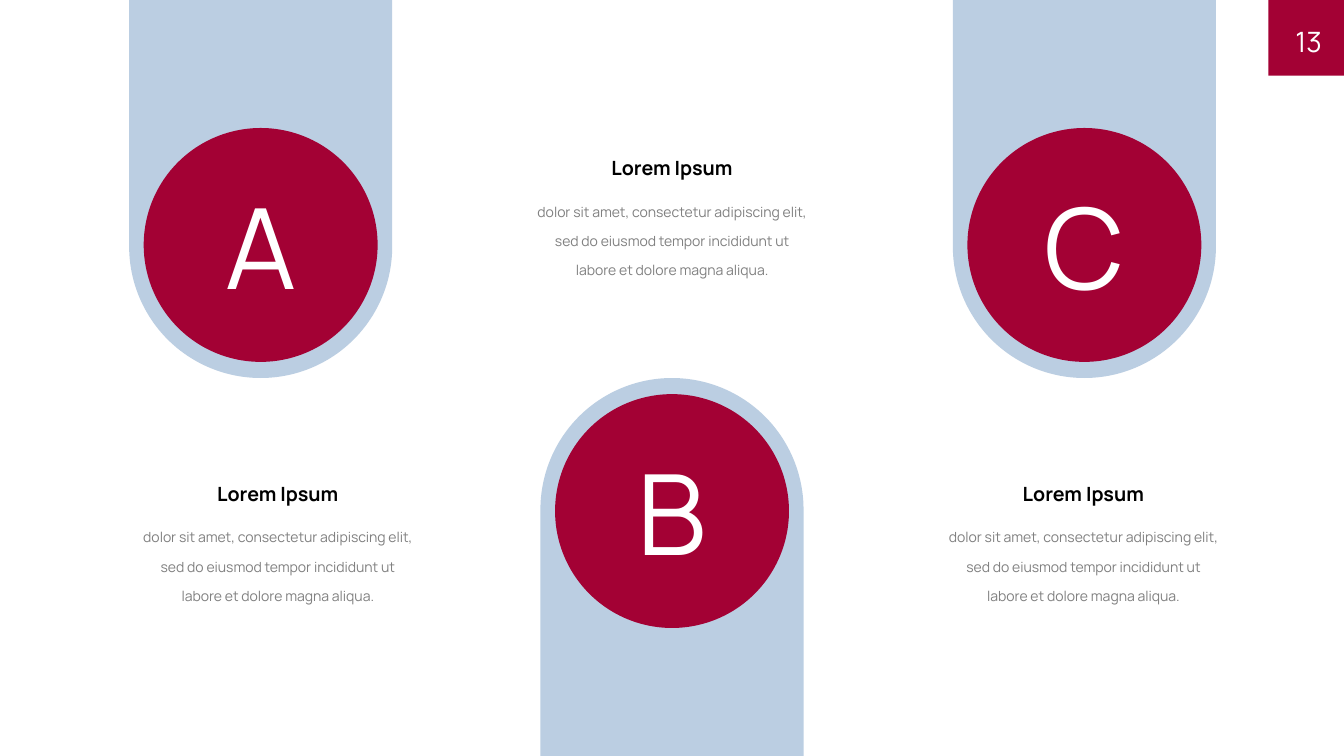
from pptx import Presentation
from pptx.dml.color import RGBColor
from pptx.enum.shapes import MSO_SHAPE
from pptx.enum.text import MSO_ANCHOR, MSO_AUTO_SIZE, PP_ALIGN
from pptx.util import Inches, Pt


def color(value):
    return RGBColor.from_string(value)


class SlideBuilder:
    """Draws the elements of one slide in a shared style."""

    RED, BLUE, WHITE, BLACK, GRAY = "A30134", "BBCEE2", "FFFFFF", "000000", "808080"
    FONT = "Manrope"

    def __init__(self, slide):
        self.slide = slide

    def shape(self, kind, area, fill):
        shape = self.slide.shapes.add_shape(kind, *map(Inches, area))
        shape.shadow.inherit = False
        shape.fill.solid()
        shape.fill.fore_color.rgb = color(fill)
        shape.line.fill.background()
        return shape

    def fill_text(self, frame, text, size, ink, frame_format=None, para_format=None, bold=False):
        for name, value in {"word_wrap": True, **(frame_format or {})}.items():
            setattr(frame, name, value)
        para = frame.paragraphs[0]
        for name, value in {"alignment": PP_ALIGN.CENTER, **(para_format or {})}.items():
            setattr(para, name, value)
        span = para.add_run()
        span.text = text
        for name, value in {"name": self.FONT, "size": Pt(size), "bold": bold}.items():
            setattr(span.font, name, value)
        span.font.color.rgb = color(ink)

    def text(self, area, *content, **formats):
        box = self.slide.shapes.add_textbox(*map(Inches, area))
        self.fill_text(box.text_frame, *content, **formats)

    def pillar(self, letter, left, top, circle_top, rotation):
        width, height, diameter = 2.61, 3.75, 2.32
        pillar = self.shape(MSO_SHAPE.ROUND_2_SAME_RECTANGLE, (left, top, width, height), self.BLUE)
        pillar.adjustments[0] = 0.5
        pillar.adjustments[1] = 0
        pillar.rotation = rotation
        circle_left = left + (width - diameter) / 2
        circle = self.shape(MSO_SHAPE.OVAL, (circle_left, circle_top, diameter, diameter), self.RED)
        self.fill_text(circle.text_frame, letter, 80, self.WHITE,
                       frame_format={"vertical_anchor": MSO_ANCHOR.MIDDLE})

    def caption(self, left, top, title, body):
        width, title_height, body_height = 2.89, 0.34, 0.95
        grow = {"auto_size": MSO_AUTO_SIZE.SHAPE_TO_FIT_TEXT}
        self.text((left, top + title_height, width, body_height), body, 10, self.GRAY,
                  frame_format=grow, para_format={"line_spacing": 1.75})
        self.text((left, top, width, title_height), title, 14, self.BLACK,
                  frame_format=grow, bold=True)

    def page_number(self, number):
        self.shape(MSO_SHAPE.RECTANGLE, (12.58, 0, 0.75, 0.75), self.RED)
        margins = {f"margin_{side}": 0 for side in ("left", "top", "right", "bottom")}
        self.text((12.56, 0.06, 0.55, 0.69), number, 20, self.WHITE,
                  frame_format={"vertical_anchor": MSO_ANCHOR.MIDDLE, **margins},
                  para_format={"alignment": PP_ALIGN.RIGHT})


def main():
    deck = Presentation()
    deck.slide_width, deck.slide_height = Inches(13.33), Inches(7.5)
    page = SlideBuilder(deck.slides.add_slide(deck.slide_layouts[6]))
    page.page_number("13")

    title = "Lorem Ipsum"
    body = ("dolor sit amet, consectetur adipiscing elit, sed do eiusmod tempor "
            "incididunt ut labore et dolore magna aliqua.")
    hanging = {"top": 0, "circle_top": 1.27, "rotation": 180}
    standing = {"top": 3.75, "circle_top": 3.91, "rotation": 0}
    columns = [
        ("A", 1.28, hanging, 1.31, 4.73),
        ("B", 5.36, standing, 5.22, 1.5),
        ("C", 9.45, hanging, 9.3, 4.73),
    ]
    for letter, pillar_left, placement, caption_left, caption_top in columns:
        page.pillar(letter, pillar_left, **placement)
        page.caption(caption_left, caption_top, title, body)

    deck.save("out.pptx")


if __name__ == "__main__":
    main()
